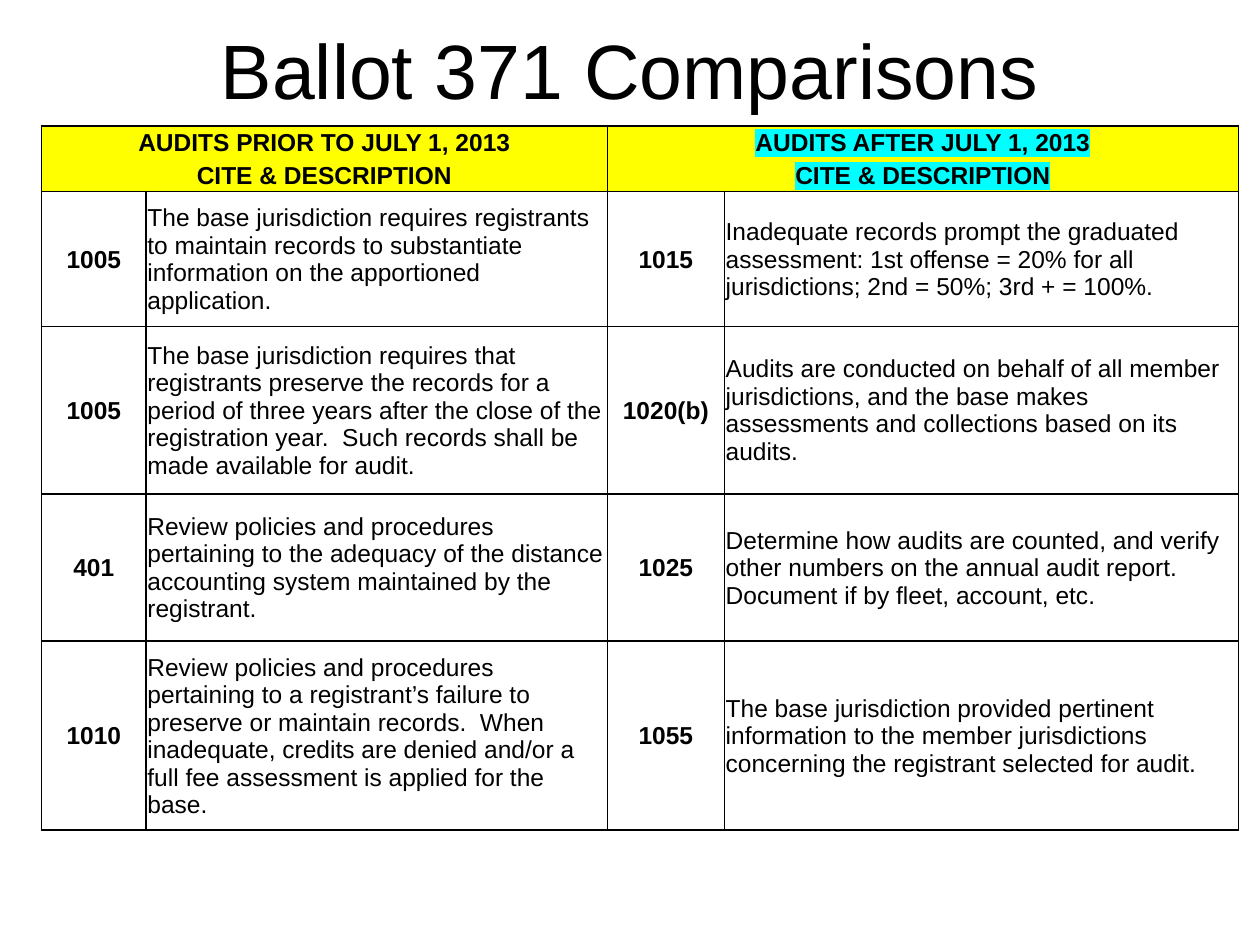
from lxml.etree import SubElement
from pptx import Presentation
from pptx.dml.color import RGBColor
from pptx.enum.text import MSO_ANCHOR, PP_ALIGN
from pptx.oxml.ns import qn
from pptx.util import Inches, Pt

COLORS = {"text": "000000", "border": "000000", "header": "FFFF00",
          "before": "FFFF00", "after": "00FFFF"}
FONT = "Arial"
COLUMN_WIDTHS = [0.83, 3.66, 0.93, 4.08]
ROW_HEIGHTS = [0.26, 0.26, 1.07, 1.33, 1.17, 1.5]
HEADERS = [
    ("AUDITS PRIOR TO JULY 1, 2013", "AUDITS AFTER JULY 1, 2013"),
    ("CITE & DESCRIPTION", "CITE & DESCRIPTION"),
]
COMPARISONS = [
    ("1005",
     "The base jurisdiction requires registrants to maintain records to substantiate "
     "information on the apportioned application.",
     "1015",
     "Inadequate records prompt the graduated assessment: 1st offense = 20% for all "
     "jurisdictions; 2nd = 50%; 3rd + = 100%."),
    ("1005",
     "The base jurisdiction requires that registrants preserve the records for a period of "
     "three years after the close of the registration year.  Such records shall be made "
     "available for audit.",
     "1020(b)",
     "Audits are conducted on behalf of all member jurisdictions, and the base makes "
     "assessments and collections based on its audits."),
    ("401",
     "Review policies and procedures pertaining to the adequacy of the distance accounting "
     "system maintained by the registrant.",
     "1025",
     "Determine how audits are counted, and verify other numbers on the annual audit report. "
     "Document if by fleet, account, etc."),
    ("1010",
     "Review policies and procedures pertaining to a registrant’s failure to preserve or "
     "maintain records.  When inadequate, credits are denied and/or a full fee assessment "
     "is applied for the base.",
     "1055",
     "The base jurisdiction provided pertinent information to the member jurisdictions "
     "concerning the registrant selected for audit."),
]


def color(name):
    return RGBColor.from_string(COLORS[name])


def set_borders(cell, sides):
    """Draw the given sides (letters of LRTB) and hide the others."""
    properties = cell._tc.get_or_add_tcPr()
    for side in "LRTB":
        line = SubElement(properties, qn(f"a:ln{side}"), w=str(Pt(1)))
        if side in sides:
            fill = SubElement(line, qn("a:solidFill"))
            SubElement(fill, qn("a:srgbClr"), val=COLORS["border"])
        else:
            SubElement(line, qn("a:noFill"))


def highlight(run, name):
    properties = run.font._element
    mark = SubElement(properties, qn("a:highlight"))
    SubElement(mark, qn("a:srgbClr"), val=COLORS[name])
    properties.find(qn("a:solidFill")).addnext(mark)


def write(text_frame, text, size, bold=False, centered=True):
    text_frame.text = text
    paragraph = text_frame.paragraphs[0]
    paragraph.alignment = PP_ALIGN.CENTER if centered else PP_ALIGN.LEFT
    run = paragraph.runs[0]
    run.font.size = Pt(size)
    run.font.bold = bold
    run.font.name = FONT
    run.font.color.rgb = color("text")
    return run


def fill_cell(cell, text, bold, centered):
    cell.margin_left = cell.margin_right = cell.margin_top = Inches(0.01)
    cell.margin_bottom = 0
    cell.vertical_anchor = MSO_ANCHOR.MIDDLE
    return write(cell.text_frame, text, 14, bold, centered)


def add_header(table):
    for row, texts in enumerate(HEADERS):
        outer_side = "T" if row == 0 else "B"
        for side, (text, mark) in enumerate(zip(texts, ("before", "after"))):
            first, second = table.cell(row, 2 * side), table.cell(row, 2 * side + 1)
            first.merge(second)
            set_borders(first, "LR" + outer_side)
            set_borders(second, "R" + outer_side)
            for cell in (first, second):
                cell.fill.solid()
                cell.fill.fore_color.rgb = color("header")
            highlight(fill_cell(first, text, True, True), mark)


def add_comparisons(table):
    for row, texts in enumerate(COMPARISONS, start=len(HEADERS)):
        for column, text in enumerate(texts):
            cell = table.cell(row, column)
            is_cite = column % 2 == 0
            fill_cell(cell, text, is_cite, is_cite)
            set_borders(cell, "LRTB")
            cell.fill.background()


def add_comparison_table(slide, left, top):
    frame = slide.shapes.add_table(
        len(ROW_HEIGHTS), len(COLUMN_WIDTHS), left, top,
        Inches(sum(COLUMN_WIDTHS)), Inches(sum(ROW_HEIGHTS)))
    table = frame.table
    table.first_row = table.horz_banding = False
    for column, width in zip(table.columns, COLUMN_WIDTHS):
        column.width = Inches(width)
    for row, height in zip(table.rows, ROW_HEIGHTS):
        row.height = Inches(height)
    add_header(table)
    add_comparisons(table)


def place_title(slide, left, top, width, height):
    title = slide.shapes.title
    title.left, title.top, title.width, title.height = left, top, width, height
    title.text_frame.vertical_anchor = MSO_ANCHOR.MIDDLE
    write(title.text_frame, "Ballot 371 Comparisons", 44)


def main():
    presentation = Presentation()
    presentation.slide_width, presentation.slide_height = Inches(10), Inches(7.5)
    slide = presentation.slides.add_slide(presentation.slide_layouts[5])
    place_title(slide, Inches(0.75), Inches(0.17), Inches(8.5), Inches(0.75))
    add_comparison_table(slide, Inches(0.33), Inches(1))
    presentation.save("out.pptx")


if __name__ == "__main__":
    main()
